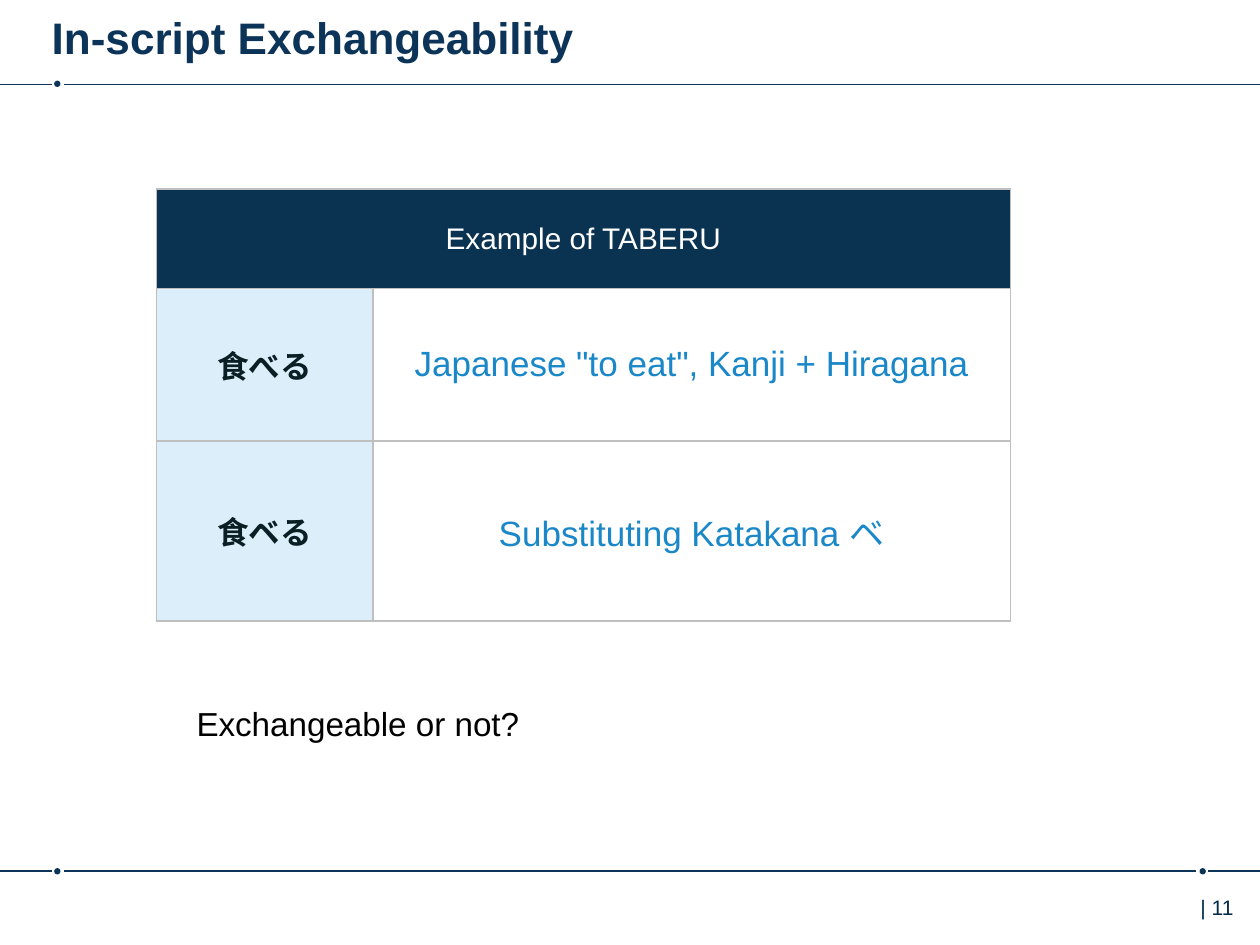
from lxml import etree
from pptx import Presentation
from pptx.dml.color import RGBColor
from pptx.enum.shapes import MSO_CONNECTOR, MSO_SHAPE
from pptx.enum.text import MSO_ANCHOR, PP_ALIGN
from pptx.oxml.ns import qn
from pptx.util import Inches, Pt

LINE, OVAL = MSO_CONNECTOR.STRAIGHT, MSO_SHAPE.OVAL
TOP, MIDDLE = MSO_ANCHOR.TOP, MSO_ANCHOR.MIDDLE
LEFT, CENTER, RIGHT = PP_ALIGN.LEFT, PP_ALIGN.CENTER, PP_ALIGN.RIGHT

COLORS = {
    "navy": "0C3458", "number": "002B49", "black": "000000", "white": "FFFFFF",
    "header": "0A3251", "pale": "CDE8F9", "word": "0A1F24", "blue": "1A87C9",
    "border": "BFBFBF",
}


def rgb(name):
    return RGBColor.from_string(COLORS[name])


def write(tf, text, size, color, bold=False, align=LEFT, anchor=TOP, insets=None):
    tf.word_wrap = True
    tf.vertical_anchor = anchor
    if insets:
        tf.margin_left, tf.margin_top, tf.margin_right, tf.margin_bottom = map(Inches, insets)
    p = tf.paragraphs[0]
    p.alignment = align
    p.space_before = Pt(0)
    r = p.add_run()
    r.text = text
    r.font.name = "Arial"
    r.font.size = Pt(size)
    r.font.bold = bold
    r.font.color.rgb = rgb(color)
    return p


prs = Presentation()
prs.slide_width, prs.slide_height = Inches(10), Inches(7.5)
s = prs.slides.add_slide(prs.slide_layouts[1])

# Rules with gaps for the dots
for x1, x2, y in [(0, 0.41, 0.67), (0.51, 10, 0.67),
                  (0, 0.41, 6.91), (0.51, 9.49, 6.91), (9.59, 10, 6.91)]:
    line = s.shapes.add_connector(LINE, Inches(x1), Inches(y), Inches(x2), Inches(y))
    line.line.color.rgb = rgb("navy")
    line.line.width = Pt(1)
    etree.SubElement(line._element.spPr, qn("a:effectLst"))

# Dots
for x, y in [(0.43, 0.64), (0.43, 6.89), (9.52, 6.89)]:
    dot = s.shapes.add_shape(OVAL, Inches(x), Inches(y), Inches(0.05), Inches(0.05))
    dot.shadow.inherit = False
    dot.fill.solid()
    dot.fill.fore_color.rgb = rgb("navy")
    dot.line.fill.background()

# Page number
sp = s.shapes.add_textbox(Inches(9.29), Inches(7.05), Inches(0.5), Inches(0.4))
write(sp.text_frame, "| 11", 12, "number", align=RIGHT, insets=(0, 0.05, 0, 0.05))

# Title
title = s.shapes.title
title.left, title.top, title.width, title.height = map(Inches, (0.41, 0.05, 8.76, 0.49))
write(title.text_frame, "In-script Exchangeability", 25.2, "navy", bold=True,
      anchor=MIDDLE, insets=(0, 0.05, 0, 0.05))

# Question
body = s.placeholders[1]
body.left, body.top, body.width, body.height = map(Inches, (1.56, 5.58, 7.52, 0.49))
p = write(body.text_frame, "Exchangeable or not?", 19, "black", insets=(0, 0, 0, 0))
pPr = p._p.get_or_add_pPr()
pPr.set("marL", "0")
pPr.set("indent", "0")
etree.SubElement(pPr, qn("a:buNone"))

# Table
widths, heights = [1.72, 5.06], [0.79, 1.21, 1.43]
table = s.shapes.add_table(3, 2, Inches(1.24), Inches(1.5),
                           Inches(sum(widths)), Inches(sum(heights))).table
table.first_row = table.horz_banding = False
for col, width in zip(table.columns, widths):
    col.width = Inches(width)
for row, height in zip(table.rows, heights):
    row.height = Inches(height)
table.cell(0, 0).merge(table.cell(0, 1))

rows = [
    ["Example of TABERU", ""],
    ["食べる", 'Japanese "to eat", Kanji + Hiragana'],
    ["食ベる", "Substituting Katakana ベ"],
]
for i, texts in enumerate(rows):
    for j, text in enumerate(texts):
        if i == 0:
            fill, size, color = "header", 17, "white"
        elif j == 0:
            fill, size, color = "pale", 18, "word"
        else:
            fill, size, color = "white", 20, "blue"
        cell = table.cell(i, j)
        cell.vertical_anchor = MIDDLE
        if text:
            write(cell.text_frame, text, size, color, bold=i > 0 and j == 0,
                  align=CENTER, anchor=MIDDLE)
            cell.vertical_anchor = MIDDLE

        # Borders come before the fill in the cell properties
        tcPr = cell._tc.get_or_add_tcPr()
        for side in ("lnL", "lnR", "lnT", "lnB"):
            ln = etree.SubElement(tcPr, qn(f"a:{side}"), w=str(Pt(1)))
            solid = etree.SubElement(ln, qn("a:solidFill"))
            etree.SubElement(solid, qn("a:srgbClr"), val=COLORS["border"])
        cell.fill.solid()
        cell.fill.fore_color.rgb = rgb(fill)
        if i > 0:
            clr = tcPr.find(qn("a:solidFill")).find(qn("a:srgbClr"))
            etree.SubElement(clr, qn("a:alpha"), val="70000")

prs.save("out.pptx")
